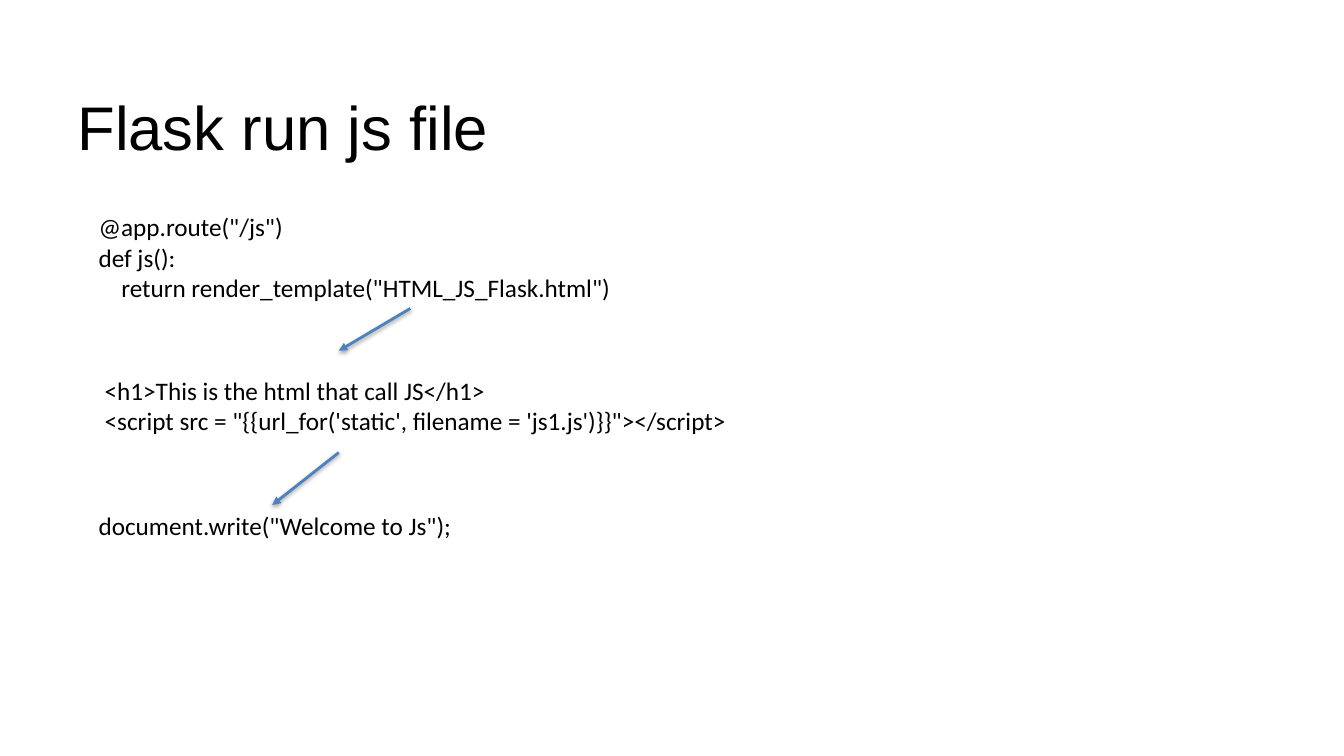
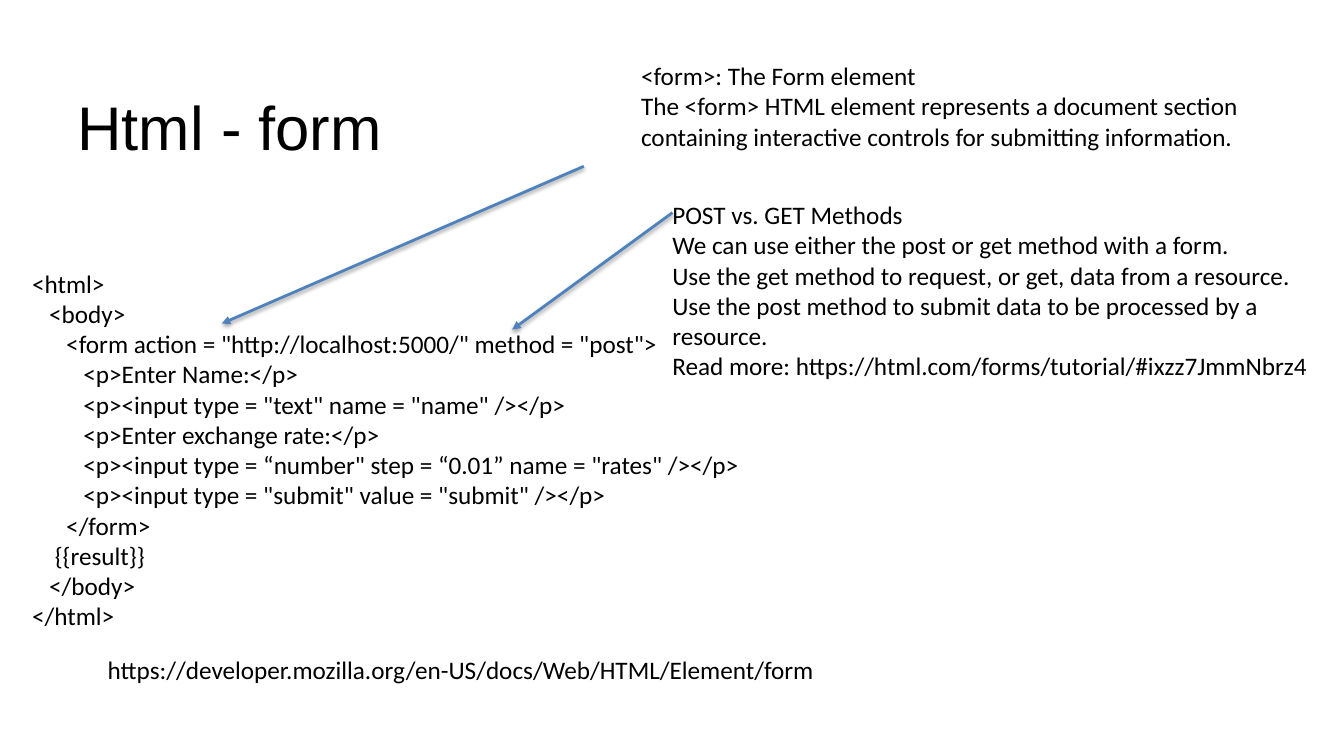
from lxml import etree
from pptx import Presentation
from pptx.dml.color import RGBColor
from pptx.enum.shapes import MSO_CONNECTOR
from pptx.enum.text import MSO_ANCHOR
from pptx.oxml import parse_xml
from pptx.oxml.ns import nsdecls, qn
from pptx.util import Emu, Pt

PX = 9144  # EMU per px, 100 px to the inch
SLIDE_SIZE = (1333, 750)
BLANK_LAYOUT = 6
STRAIGHT = MSO_CONNECTOR.STRAIGHT
TOP, MIDDLE = MSO_ANCHOR.TOP, MSO_ANCHOR.MIDDLE

BLACK = RGBColor(0x00, 0x00, 0x00)
BLUE = RGBColor(0x4F, 0x81, 0xBD)

# Shared text styles
TITLE_BOX = (67, 62, 1200, 125)
TITLE_FONT = {"name": "Arial", "size": Pt(44)}
BODY_FONT = {"name": "Calibri", "size": Pt(18)}

ARROW_SHADOW = (
    f'<a:effectLst {nsdecls("a")}>'
    '<a:outerShdw blurRad="40000" dist="20000" dir="5400000" rotWithShape="0">'
    '<a:srgbClr val="000000"><a:alpha val="38000"/></a:srgbClr>'
    '</a:outerShdw></a:effectLst>'
)

# Slide texts
ROUTE_CODE = """@app.route("/js")
def js():
    return render_template("HTML_JS_Flask.html")"""

TEMPLATE_CODE = """<h1>This is the html that call JS</h1>
<script src = "{{url_for('static', filename = 'js1.js')}}"></script>"""

SCRIPT_CODE = 'document.write("Welcome to Js");'

FORM_CODE = """<html>
   <body>
      <form action = "http://localhost:5000/" method = "post">
         <p>Enter Name:</p>
         <p><input type = "text" name = "name" /></p>
         <p>Enter exchange rate:</p>
         <p><input type = “number" step = “0.01” name = "rates" /></p>
         <p><input type = "submit" value = "submit" /></p>
      </form>
    {{result}}
   </body>
</html>"""

FORM_NOTE = """<form>: The Form element
The <form> HTML element represents a document section containing interactive controls for submitting information."""

METHODS_NOTE = """POST vs. GET Methods
We can use either the post or get method with a form.
Use the get method to request, or get, data from a resource.
Use the post method to submit data to be processed by a resource.
Read more: https://html.com/forms/tutorial/#ixzz7JmmNbrz4"""

FORM_LINK = "https://developer.mozilla.org/en-US/docs/Web/HTML/Element/form"


def px(*lengths):
    return [Emu(length * PX) for length in lengths]


def add_text(slide, box, text, font=BODY_FONT, anchor=TOP):
    """Place text in a wrapping box, one paragraph a line."""
    frame = slide.shapes.add_textbox(*px(*box)).text_frame
    frame.word_wrap = True
    frame.vertical_anchor = anchor
    frame.text = text
    for paragraph in frame.paragraphs:
        for run in paragraph.runs:
            for attribute, value in font.items():
                setattr(run.font, attribute, value)
            run.font.color.rgb = BLACK


def add_arrow(slide, start, end):
    """Draw a blue arrow with a soft shadow."""
    arrow = slide.shapes.add_connector(STRAIGHT, *px(*start, *end))
    arrow.line.color.rgb = BLUE
    arrow.line.width = Pt(2)
    properties = arrow._element.spPr
    etree.SubElement(properties.find(qn("a:ln")), qn("a:tailEnd"), type="triangle")
    properties.append(parse_xml(ARROW_SHADOW))


def add_slide(deck, title, texts, arrows):
    slide = deck.slides.add_slide(deck.slide_layouts[BLANK_LAYOUT])
    add_text(slide, TITLE_BOX, title, TITLE_FONT, MIDDLE)
    for box, text in texts:
        add_text(slide, box, text)
    for start, end in arrows:
        add_arrow(slide, start, end)


def main():
    deck = Presentation()
    deck.slide_width, deck.slide_height = px(*SLIDE_SIZE)

    # From route to template to script
    add_slide(
        deck,
        "Flask run js file",
        texts=[
            ((88, 205, 667, 101), ROUTE_CODE),
            ((94, 367, 667, 71), TEMPLATE_CODE),
            ((88, 501, 667, 40), SCRIPT_CODE),
        ],
        arrows=[((407, 306), (336, 348)), ((336, 449), (270, 501))],
    )

    # Form code with notes on its element and method
    add_slide(
        deck,
        "Html - form",
        texts=[
            ((626, 55, 667, 101), FORM_NOTE),
            ((22, 261, 768, 374), FORM_CODE),
            ((97, 644, 1005, 40), FORM_LINK),
            ((657, 193, 667, 192), METHODS_NOTE),
        ],
        arrows=[((579, 165), (220, 321)), ((667, 211), (508, 327))],
    )

    deck.save("out.pptx")


if __name__ == "__main__":
    main()
